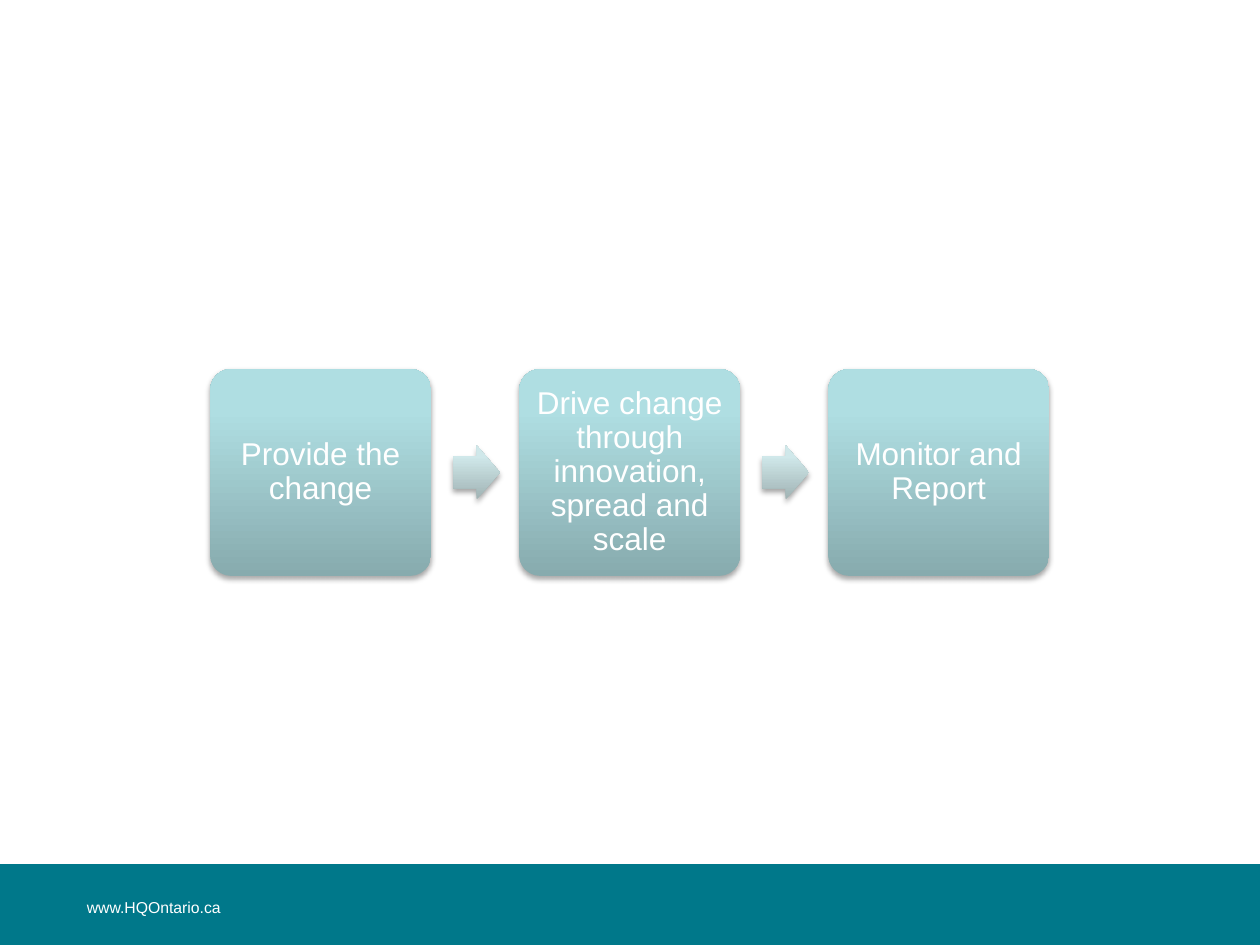
"""Build a slide with a three-step process above a footer bar."""
from copy import deepcopy

from pptx import Presentation
from pptx.dml.color import RGBColor
from pptx.enum.shapes import MSO_SHAPE as Shape
from pptx.enum.text import MSO_ANCHOR as Anchor, PP_ALIGN as Align
from pptx.oxml import parse_xml
from pptx.oxml.ns import nsdecls, qn
from pptx.util import Cm, Pt

STEPS = ["Provide the change", "Drive change through innovation, spread and scale", "Monitor and Report"]
WEBSITE = "www.HQOntario.ca"
COLORS = {"footer": "00788A", "text": "FFFFFF", "shadow": "000000"}
GRADIENTS = {
    "step": [(0, "87ABAE"), (0.8, "AFDEE2"), (1, "AFE0E4")],
    "arrow": [(0, "A0B3B4"), (0.8, "D0E8EA"), (1, "D0EAEC")],
}
STEP_LEFT, STEP_TOP, STEP_WIDTH, STEP_HEIGHT, STEP_PITCH = 4.24, 7.44, 4.45, 4.17, 6.23
ARROW_WIDTH, ARROW_HEIGHT, ARROW_GAP = 0.94, 1.09, 0.45
STEP_FRAME = {
    "word_wrap": True, "vertical_anchor": Anchor.MIDDLE,
    "margin_left": Cm(0.18), "margin_right": Cm(0.18),
    "margin_top": Cm(0.18), "margin_bottom": Cm(0.18),
}
STEP_PARAGRAPH = {"alignment": Align.CENTER, "line_spacing": 0.9}


def apply(target, values):
    for name, value in values.items():
        setattr(target, name, value)


def write(frame, text, size):
    paragraph = frame.paragraphs[0]
    run = paragraph.add_run()
    run.text = text
    apply(run.font, {"name": "Arial", "size": Pt(size)})
    run.font.color.rgb = RGBColor.from_string(COLORS["text"])
    return paragraph


def add_plain(slide, kind, left, top, width, height):
    shape = slide.shapes.add_shape(kind, Cm(left), Cm(top), Cm(width), Cm(height))
    shape.shadow.inherit = False
    shape.line.fill.background()
    return shape


def add_shaded(slide, kind, box, adjustments, gradient):
    shape = add_plain(slide, kind, *box)
    for index, value in enumerate(adjustments):
        shape.adjustments[index] = value
    shape.fill.gradient()
    shape.fill.gradient_angle = 90
    properties = shape._element.spPr
    stops = properties.find(".//" + qn("a:gsLst"))
    stops.append(deepcopy(stops[0]))
    for stop, (position, color) in zip(shape.fill.gradient_stops, GRADIENTS[gradient]):
        stop.position = position
        stop.color.rgb = RGBColor.from_string(color)
    properties.find(qn("a:effectLst")).append(parse_xml(
        f'<a:outerShdw {nsdecls("a")} blurRad="{Pt(3.1)}" dist="{Pt(1.8)}" dir="5400000" rotWithShape="0">'
        f'<a:srgbClr val="{COLORS["shadow"]}"><a:alpha val="35000"/></a:srgbClr></a:outerShdw>'))
    return shape


def add_footer(slide):
    bar = add_plain(slide, Shape.RECTANGLE, 0, 17.42, 25.5, 1.7)
    bar.fill.solid()
    bar.fill.fore_color.rgb = RGBColor.from_string(COLORS["footer"])
    website = slide.shapes.add_textbox(Cm(1.5), Cm(17.98), Cm(7.82), Cm(0.69))
    website.text_frame.word_wrap = True
    write(website.text_frame, WEBSITE, 9)


def add_process(slide):
    for index, label in enumerate(STEPS):
        left = STEP_LEFT + index * STEP_PITCH
        step = add_shaded(slide, Shape.ROUNDED_RECTANGLE,
                          (left, STEP_TOP, STEP_WIDTH, STEP_HEIGHT), [0.1], "step")
        apply(step.text_frame, STEP_FRAME)
        apply(write(step.text_frame, label, 18), STEP_PARAGRAPH)
        if index < len(STEPS) - 1:
            arrow_left = left + STEP_WIDTH + ARROW_GAP
            arrow_top = STEP_TOP + (STEP_HEIGHT - ARROW_HEIGHT) / 2
            add_shaded(slide, Shape.RIGHT_ARROW,
                       (arrow_left, arrow_top, ARROW_WIDTH, ARROW_HEIGHT), [0.6, 0.5], "arrow")


def main():
    deck = Presentation()
    apply(deck, {"slide_width": Cm(25.4), "slide_height": Cm(19.05)})
    slide = deck.slides.add_slide(deck.slide_layouts[6])
    add_footer(slide)
    add_process(slide)
    deck.save("out.pptx")


if __name__ == "__main__":
    main()
